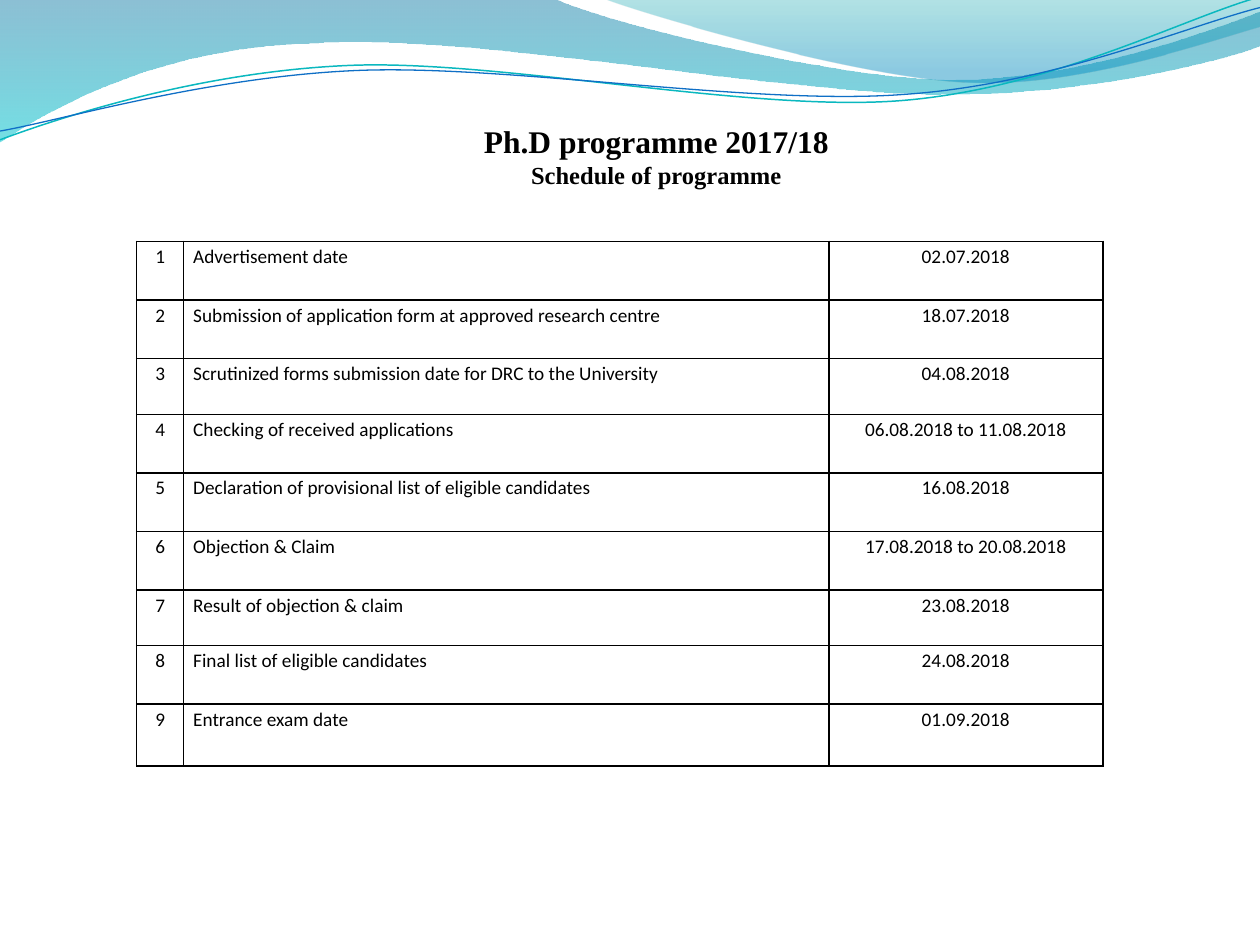
from math import cos, radians, sin

from lxml import etree
from pptx import Presentation
from pptx.dml.color import RGBColor
from pptx.enum.text import MSO_ANCHOR, MSO_AUTO_SIZE, PP_ALIGN
from pptx.oxml.ns import qn
from pptx.util import Pt

CENTER = PP_ALIGN.CENTER
JUSTIFY = PP_ALIGN.JUSTIFY
MIDDLE = MSO_ANCHOR.MIDDLE
GROW = MSO_AUTO_SIZE.SHAPE_TO_FIT_TEXT

TITLE_ONLY_LAYOUT = 5
CURVE_TILT = 357.3

COLORS = {
    "text": "000000",
    "border": "000000",
    "deep_blue": "0074A1",
    "aqua": "00C6CF",
    "teal": "00A1A9",
    "sky": "008BBF",
    "teal_line": "0AB8BF",
    "blue_line": "0F6FC6",
}

# Boxes are left, top, width, height in points. Outlines are slide positions in
# points: a start, then (x, y) lines and six-number Bezier curves.
WIDE_WAVE_BOX = (-0.7, -0.7, 721.4, 82.1)
WIDE_WAVE = [
    (0, 0), (316.8, -0.7),
    (342.7, 12.2, 478.1, 45.4, 545.8, 45.4),
    (614.2, 45.4, 689.8, 18.7, 720, 6.5),
    (720.7, 25.9),
    (707.8, 31.7, 626.4, 54.7, 537.1, 54),
    (447.8, 54, 275, 20.2, 185, 24.5),
    (92.9, 25.9, 33.1, 59.8, -0.7, 81.4),
    (0, 0),
]
RIGHT_WAVE_BOX = (344.9, -0.7, 375.1, 50.4)
RIGHT_WAVE = [
    (344.9, -0.7),
    (366.5, 7.9, 491, 44.6, 553.7, 46.8),
    (616.3, 49.7, 691.9, 23, 720, 15.1),
    (720, 0), (344.9, -0.7),
]
TEAL_CURVE_BOX = (-1.4, 15.8, 721.4, 51.1)
TEAL_CURVE = [
    (0, 79.9),
    (34.6, 67, 113.8, 41, 199.4, 37.4),
    (284.4, 33.8, 427, 64.1, 513.4, 57.6),
    (599.8, 51.1, 675.4, 10.8, 718.6, -1.4),
]
BLUE_CURVE_BOX = (-1.4, 21.6, 722.2, 41.8)
BLUE_CURVE = [
    (0, 74.9),
    (33.8, 69.1, 118.1, 43.9, 203.8, 40.3),
    (290.2, 36.7, 429.8, 60.5, 516.2, 54),
    (601.9, 48.2, 677.5, 15.1, 720, 4.3),
]

HEADING = [("Ph.D programme 2017/18", 18), ("Schedule of programme", 14)]
SCHEDULE = [
    ("Advertisement date", "02.07.2018"),
    ("Submission of application form at approved research centre", "18.07.2018"),
    ("Scrutinized forms submission date for DRC to the University", "04.08.2018"),
    ("Checking of received applications", "06.08.2018 to 11.08.2018"),
    ("Declaration of provisional list of eligible candidates", "16.08.2018"),
    ("Objection & Claim", "17.08.2018 to 20.08.2018"),
    ("Result of objection & claim", "23.08.2018"),
    ("Final list of eligible candidates", "24.08.2018"),
    ("Entrance exam date", "01.09.2018"),
]
COLUMN_WIDTHS = [27, 368.6, 156.6]
COLUMN_ALIGNMENTS = [CENTER, JUSTIFY, CENTER]
ROW_HEIGHT = 33.5
SPECIAL_ROW_HEIGHTS = {3: 31.8, 7: 31.8, 9: 35.3}


def rgb(name):
    return RGBColor.from_string(COLORS[name])


def local_point(x, y, box, rotation):
    """Place a slide position inside the box as it lies before rotation."""
    left, top, width, height = box
    dx, dy = x - left - width / 2, y - top - height / 2
    turn = radians(-rotation)
    return (width / 2 + dx * cos(turn) - dy * sin(turn),
            height / 2 + dx * sin(turn) + dy * cos(turn))


def add_outline(slide, outline, box, rotation=0, close=False):
    """Add a freeform whose six-number segments are true Bezier curves."""
    builder = slide.shapes.build_freeform(*map(Pt, outline[0]))
    builder.add_line_segments([tuple(map(Pt, segment[-2:])) for segment in outline[1:]],
                              close=close)
    shape = builder.convert_to_shape()
    shape.left, shape.top, shape.width, shape.height = map(Pt, box)
    shape.rotation = rotation
    shape.shadow.inherit = False
    contour = next(shape._element.iter(qn("a:path")))
    contour.set("w", str(shape.width))
    contour.set("h", str(shape.height))
    for command in list(contour):
        contour.remove(command)
    for index, segment in enumerate(outline):
        tag = "a:cubicBezTo" if len(segment) == 6 else "a:lnTo" if index else "a:moveTo"
        command = etree.SubElement(contour, qn(tag))
        for x, y in zip(segment[::2], segment[1::2]):
            local_x, local_y = local_point(x, y, box, rotation)
            etree.SubElement(command, qn("a:pt"), x=str(Pt(local_x)), y=str(Pt(local_y)))
    if close:
        etree.SubElement(contour, qn("a:close"))
    return shape


def add_wave(slide, outline, box, stops):
    """Add a filled wave; stops are (position, colour name, opacity percent)."""
    wave = add_outline(slide, outline, box, close=True)
    wave.line.fill.background()
    wave.fill.gradient()
    wave.fill.gradient_angle = 270
    for stop, (position, color, _) in zip(wave.fill.gradient_stops, stops):
        stop.position = position
        stop.color.rgb = rgb(color)
    gradient_colors = wave._element.spPr.iter(qn("a:srgbClr"))
    for color_element, (_, _, opacity) in zip(gradient_colors, stops):
        etree.SubElement(color_element, qn("a:alpha"), val=str(opacity * 1000))


def add_curve(slide, outline, box, color, width):
    curve = add_outline(slide, outline, box, rotation=CURVE_TILT)
    curve.fill.background()
    curve.line.color.rgb = rgb(color)
    curve.line.width = Pt(width)


def add_text_run(paragraph, text, font, size, bold=False):
    run = paragraph.add_run()
    run.text = text
    run.font.name = font
    run.font.size = Pt(size)
    run.font.bold = bold
    run.font.color.rgb = rgb("text")


def fill_heading(slide):
    heading = slide.shapes.title
    heading.left, heading.top = Pt(48.2), Pt(66)
    heading.width, heading.height = Pt(653.8), Pt(46.1)
    frame = heading.text_frame
    frame.word_wrap = True
    frame.auto_size = GROW
    frame.vertical_anchor = MIDDLE
    for index, (text, size) in enumerate(HEADING):
        paragraph = frame.add_paragraph() if index else frame.paragraphs[0]
        paragraph.alignment = CENTER
        add_text_run(paragraph, text, "Times New Roman", size, bold=True)
    # Keep the heading in front of the waves.
    slide.shapes._spTree.append(heading._element)


def add_borders(cell):
    properties = cell._tc.get_or_add_tcPr()
    for position, side in enumerate(("a:lnL", "a:lnR", "a:lnT", "a:lnB")):
        border = etree.Element(qn(side), w=str(Pt(1)))
        solid = etree.SubElement(border, qn("a:solidFill"))
        etree.SubElement(solid, qn("a:srgbClr"), val=COLORS["border"])
        properties.insert(position, border)


def fill_cell(cell, text, alignment):
    cell.margin_left = cell.margin_right = Pt(5.4)
    cell.margin_top = cell.margin_bottom = Pt(0)
    cell.fill.background()
    add_borders(cell)
    paragraph = cell.text_frame.paragraphs[0]
    paragraph.alignment = alignment
    paragraph.line_spacing = 1.15
    add_text_run(paragraph, text, "Calibri", 11)


def add_schedule(slide):
    heights = [SPECIAL_ROW_HEIGHTS.get(number, ROW_HEIGHT)
               for number in range(1, len(SCHEDULE) + 1)]
    table = slide.shapes.add_table(
        len(SCHEDULE), len(COLUMN_WIDTHS), Pt(78), Pt(138),
        Pt(sum(COLUMN_WIDTHS)), Pt(sum(heights))).table
    table.first_row = table.horz_banding = False
    for column, width in zip(table.columns, COLUMN_WIDTHS):
        column.width = Pt(width)
    for number, (row, height, entry) in enumerate(zip(table.rows, heights, SCHEDULE), 1):
        row.height = Pt(height)
        for cell, text, alignment in zip(row.cells, (str(number), *entry), COLUMN_ALIGNMENTS):
            fill_cell(cell, text, alignment)


def main():
    presentation = Presentation()
    presentation.slide_width, presentation.slide_height = Pt(720), Pt(540)
    slide = presentation.slides.add_slide(presentation.slide_layouts[TITLE_ONLY_LAYOUT])
    add_wave(slide, WIDE_WAVE, WIDE_WAVE_BOX, [(0, "deep_blue", 45), (1, "aqua", 55)])
    add_wave(slide, RIGHT_WAVE, RIGHT_WAVE_BOX, [(0, "teal", 30), (0.8, "sky", 45)])
    add_curve(slide, TEAL_CURVE, TEAL_CURVE_BOX, "teal_line", 0.85)
    add_curve(slide, BLUE_CURVE, BLUE_CURVE_BOX, "blue_line", 0.75)
    fill_heading(slide)
    add_schedule(slide)
    presentation.save("out.pptx")


if __name__ == "__main__":
    main()
